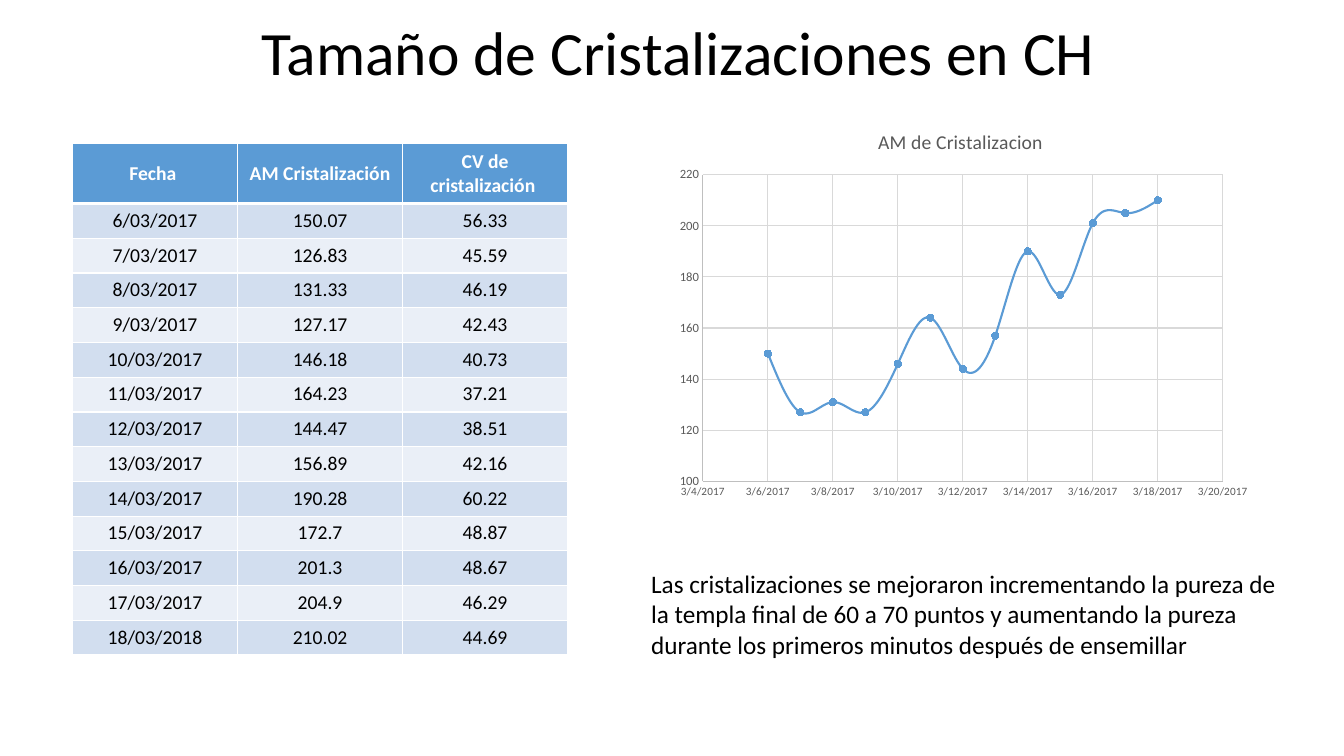
from lxml import etree
from pptx import Presentation
from pptx import util as u
from pptx.chart.data import XyChartData
from pptx.dml.color import RGBColor
from pptx.enum import chart as charts, text
from pptx.oxml import parse_xml
from pptx.oxml.ns import nsdecls, qn

COLORS = {
    "black": "000000", "white": "FFFFFF", "blue": "5B9BD5", "band": "D2DEEF",
    "light": "EAEFF7", "gray": "595959", "axis": "BFBFBF", "grid": "D9D9D9",
}
HEADERS = ["Fecha ", "AM Cristalización", "CV de cristalización "]
READINGS = [
    ("6/03/2017", 150.07, 56.33), ("7/03/2017", 126.83, 45.59),
    ("8/03/2017", 131.33, 46.19), ("9/03/2017", 127.17, 42.43),
    ("10/03/2017", 146.18, 40.73), ("11/03/2017", 164.23, 37.21),
    ("12/03/2017", 144.47, 38.51), ("13/03/2017", 156.89, 42.16),
    ("14/03/2017", 190.28, 60.22), ("15/03/2017", 172.7, 48.87),
    ("16/03/2017", 201.3, 48.67), ("17/03/2017", 204.9, 46.29),
    ("18/03/2018", 210.02, 44.69),
]
FIRST_DAY = 42800
TABLE_HEIGHT = 5.08
HEADER_HEIGHT = 0.6
NOTE = ("Las cristalizaciones se mejoraron incrementando la pureza de la templa "
        "final de 60 a 70 puntos y aumentando la pureza durante los primeros "
        "minutos después de ensemillar")
PLOT_AREA = {"x": 0.06, "y": 0.16, "w": 0.88, "h": 0.78}


def rgb(name):
    return RGBColor.from_string(COLORS[name])


def set_all(target, values):
    for name, value in values.items():
        setattr(target, name, value)


def style_font(font, size, color, bold=False):
    set_all(font, {"name": "Calibri", "size": u.Pt(size), "bold": bold})
    font.color.rgb = rgb(color)


def style_line(line, color, width):
    line.color.rgb = rgb(color)
    line.width = u.Pt(width)


def write(frame, words, size, color="black", bold=False, align=text.PP_ALIGN.CENTER):
    para = frame.paragraphs[0]
    para.alignment = align
    span = para.add_run()
    span.text = words
    style_font(span.font, size, color, bold)
    return para


def add_title(page, words):
    title = page.shapes.title
    set_all(title, {"left": u.Inches(0.98), "top": u.Inches(0.17),
                    "width": u.Inches(11.5), "height": u.Inches(0.76)})
    title.text_frame.vertical_anchor = text.MSO_ANCHOR.MIDDLE
    write(title.text_frame, words, 44).line_spacing = 0.9


def add_borders(cell, bottom):
    properties = cell._tc.get_or_add_tcPr()
    widths = {"lnL": 1, "lnR": 1, "lnT": 1, "lnB": bottom}
    for place, (side, width) in enumerate(widths.items()):
        properties.insert(place, parse_xml(
            f'<a:{side} {nsdecls("a")} w="{u.Pt(width)}"><a:solidFill>'
            f'<a:srgbClr val="{COLORS["white"]}"/></a:solidFill></a:{side}>'))


def fill_cell(cell, words, fill, color="black", bold=False, bottom=1):
    cell.fill.solid()
    cell.fill.fore_color.rgb = rgb(fill)
    write(cell.text_frame, words, 14, color, bold)
    add_borders(cell, bottom)


def add_readings_table(page):
    frame = page.shapes.add_table(len(READINGS) + 1, len(HEADERS), u.Inches(0.72),
                                  u.Inches(1.42), u.Inches(4.91), u.Inches(TABLE_HEIGHT))
    table = frame.table
    for row in table.rows:
        row.height = u.Inches((TABLE_HEIGHT - HEADER_HEIGHT) / len(READINGS))
    table.rows[0].height = u.Inches(HEADER_HEIGHT)
    for column, header in enumerate(HEADERS):
        cell = table.cell(0, column)
        fill_cell(cell, header, "blue", "white", True, 3)
        cell.vertical_anchor = text.MSO_ANCHOR.MIDDLE
    for row, reading in enumerate(READINGS, 1):
        for column, value in enumerate(reading):
            fill_cell(table.cell(row, column), str(value), "band" if row % 2 else "light")


def style_axis(axis, values, label_size, number_format):
    set_all(axis, values)
    set_all(axis, {"has_major_gridlines": True,
                   "major_tick_mark": charts.XL_TICK_MARK.NONE,
                   "minor_tick_mark": charts.XL_TICK_MARK.NONE})
    style_line(axis.format.line, "axis", 0.75)
    style_line(axis.major_gridlines.format.line, "grid", 0.75)
    labels = axis.tick_labels
    set_all(labels, {"number_format": number_format, "number_format_is_linked": False})
    style_font(labels.font, label_size, "gray")


def place_plot(chart):
    area = chart._chartSpace.chart.plotArea
    for old in area.findall(qn("c:layout")):
        area.remove(old)
    layout = parse_xml(f'<c:layout {nsdecls("c")}><c:manualLayout/></c:layout>')
    settings = {"layoutTarget": "inner", "xMode": "edge", "yMode": "edge", **PLOT_AREA}
    for name, value in settings.items():
        etree.SubElement(layout[0], qn(f"c:{name}")).set("val", str(value))
    area.insert(0, layout)


def smooth_line(series):
    element = series._element
    for old in element.findall(qn("c:smooth")):
        element.remove(old)
    etree.SubElement(element, qn("c:smooth")).set("val", "1")


def add_size_chart(page):
    data = XyChartData()
    sizes = data.add_series("AM de Cristalizacion")
    for day, reading in enumerate(READINGS, FIRST_DAY):
        sizes.add_data_point(day, round(reading[1]))
    chart = page.shapes.add_chart(charts.XL_CHART_TYPE.XY_SCATTER_SMOOTH, u.Inches(6.62),
                                  u.Inches(1.11), u.Inches(5.86), u.Inches(3.9), data).chart
    style_font(chart.font, 10, "black")
    set_all(chart, {"has_legend": False, "has_title": True})
    write(chart.chart_title.text_frame, "AM de Cristalizacion ", 14, "gray")
    chart.plots[0].vary_by_categories = False
    style_axis(chart.category_axis, {"minimum_scale": FIRST_DAY - 2,
                                     "maximum_scale": FIRST_DAY + 14,
                                     "major_unit": 2}, 8, "m/d/yyyy")
    style_axis(chart.value_axis, {"minimum_scale": 100, "maximum_scale": 220,
                                  "major_unit": 20}, 9, "General")
    line = chart.plots[0].series[0]
    style_line(line.format.line, "blue", 1.5)
    set_all(line.marker, {"style": charts.XL_MARKER_STYLE.CIRCLE, "size": 5})
    line.marker.format.fill.solid()
    line.marker.format.fill.fore_color.rgb = rgb("blue")
    style_line(line.marker.format.line, "blue", 0.75)
    smooth_line(line)
    place_plot(chart)


def add_note(page):
    box = page.shapes.add_textbox(u.Inches(6.36), u.Inches(5.59), u.Inches(6.5), u.Inches(1.01))
    set_all(box.text_frame, {"word_wrap": True,
                             "auto_size": text.MSO_AUTO_SIZE.SHAPE_TO_FIT_TEXT})
    write(box.text_frame, NOTE, 18, align=text.PP_ALIGN.LEFT)


def main():
    deck = Presentation()
    set_all(deck, {"slide_width": u.Inches(13.33), "slide_height": u.Inches(7.5)})
    page = deck.slides.add_slide(deck.slide_layouts[5])
    add_title(page, "Tamaño de Cristalizaciones en CH")
    add_readings_table(page)
    add_size_chart(page)
    add_note(page)
    deck.save("out.pptx")


if __name__ == "__main__":
    main()
